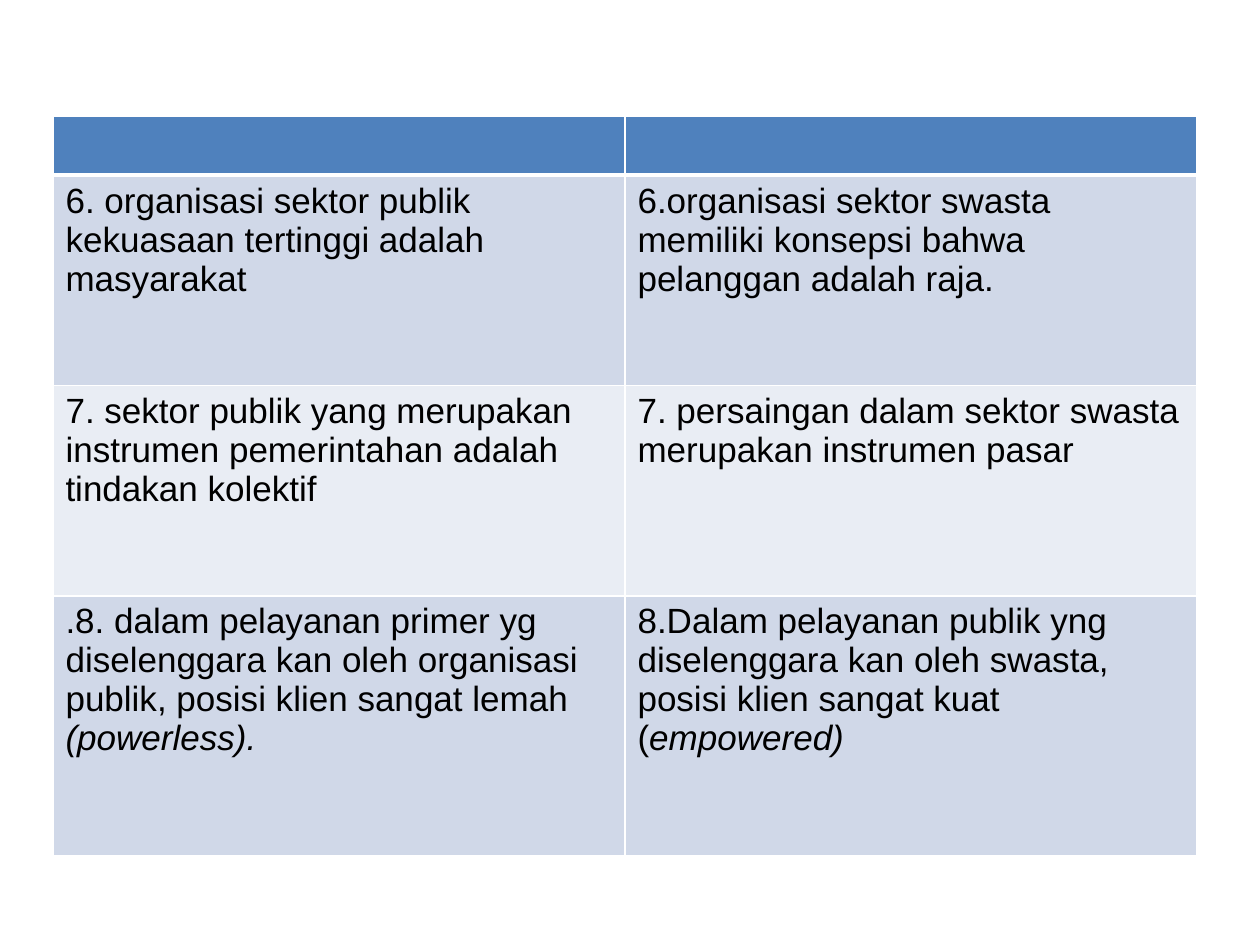
from pptx import Presentation
from pptx.dml.color import RGBColor
from pptx.oxml.ns import qn
from pptx.util import Inches, Pt
from lxml.etree import SubElement

HEADER_BLUE = RGBColor(0x4F, 0x81, 0xBD)
BAND_DARK = RGBColor(0xD0, 0xD8, 0xE8)
BAND_LIGHT = RGBColor(0xE9, 0xED, 0xF4)
BLACK = RGBColor(0, 0, 0)
WHITE = RGBColor(0xFF, 0xFF, 0xFF)

COLUMN_WIDTH = 4.54
ROW_HEIGHTS = [0.47, 1.67, 1.67, 2.06]

# Each cell: upright text, then italic text
COMPARISON = [
    [("", ""), ("", "")],
    [("6. organisasi sektor publik kekuasaan tertinggi adalah masyarakat", ""),
     ("6.organisasi sektor swasta memiliki konsepsi bahwa pelanggan adalah raja.", "")],
    [("7. sektor publik yang merupakan instrumen pemerintahan adalah tindakan kolektif", ""),
     ("7. persaingan dalam sektor swasta merupakan instrumen pasar", "")],
    [(".8. dalam pelayanan primer yg diselenggara kan oleh organisasi publik, "
      "posisi klien sangat lemah ", "(powerless)."),
     ("8.Dalam pelayanan publik yng diselenggara kan oleh swasta, "
      "posisi klien sangat kuat (", "empowered)")],
]


def add_text(paragraph, text, size=20, font="Arial", color=BLACK, italic=False):
    run = paragraph.add_run()
    run.text = text
    run.font.size = Pt(size)
    run.font.name = font
    run.font.color.rgb = color
    run.font.bold = False
    run.font.italic = italic


def set_borders(cell, bottom=1, top=1, color=WHITE):
    properties = cell._tc.get_or_add_tcPr()
    for side, width in (("L", 1), ("R", 1), ("T", top), ("B", bottom)):
        line = SubElement(properties, qn(f"a:ln{side}"), w=str(Pt(width)))
        fill = SubElement(line, qn("a:solidFill"))
        SubElement(fill, qn("a:srgbClr"), val=str(color))


def format_cell(cell, row_index):
    # The rule under the header is heavier than the others
    set_borders(cell, bottom=3 if row_index == 0 else 1,
                top=3 if row_index == 1 else 1)
    cell.fill.solid()
    if row_index == 0:
        cell.fill.fore_color.rgb = HEADER_BLUE
    else:
        cell.fill.fore_color.rgb = BAND_DARK if row_index % 2 else BAND_LIGHT


def add_comparison_table(slide, left, top):
    column_count = len(COMPARISON[0])
    table = slide.shapes.add_table(
        len(COMPARISON), column_count, Inches(left), Inches(top),
        Inches(COLUMN_WIDTH * column_count), Inches(sum(ROW_HEIGHTS))).table
    for column in table.columns:
        column.width = Inches(COLUMN_WIDTH)
    for row_index, height in enumerate(ROW_HEIGHTS):
        table.rows[row_index].height = Inches(height)
        for column_index, texts in enumerate(COMPARISON[row_index]):
            cell = table.cell(row_index, column_index)
            format_cell(cell, row_index)
            paragraph = cell.text_frame.paragraphs[0]
            for text, italic in zip(texts, (False, True)):
                if text:
                    add_text(paragraph, text, italic=italic)


def main():
    presentation = Presentation()
    presentation.slide_width = Inches(10)
    presentation.slide_height = Inches(7.5)
    # Blank layout: the slide holds only the table
    slide = presentation.slides.add_slide(presentation.slide_layouts[6])
    add_comparison_table(slide, left=0.42, top=0.92)
    presentation.save("out.pptx")


if __name__ == "__main__":
    main()
